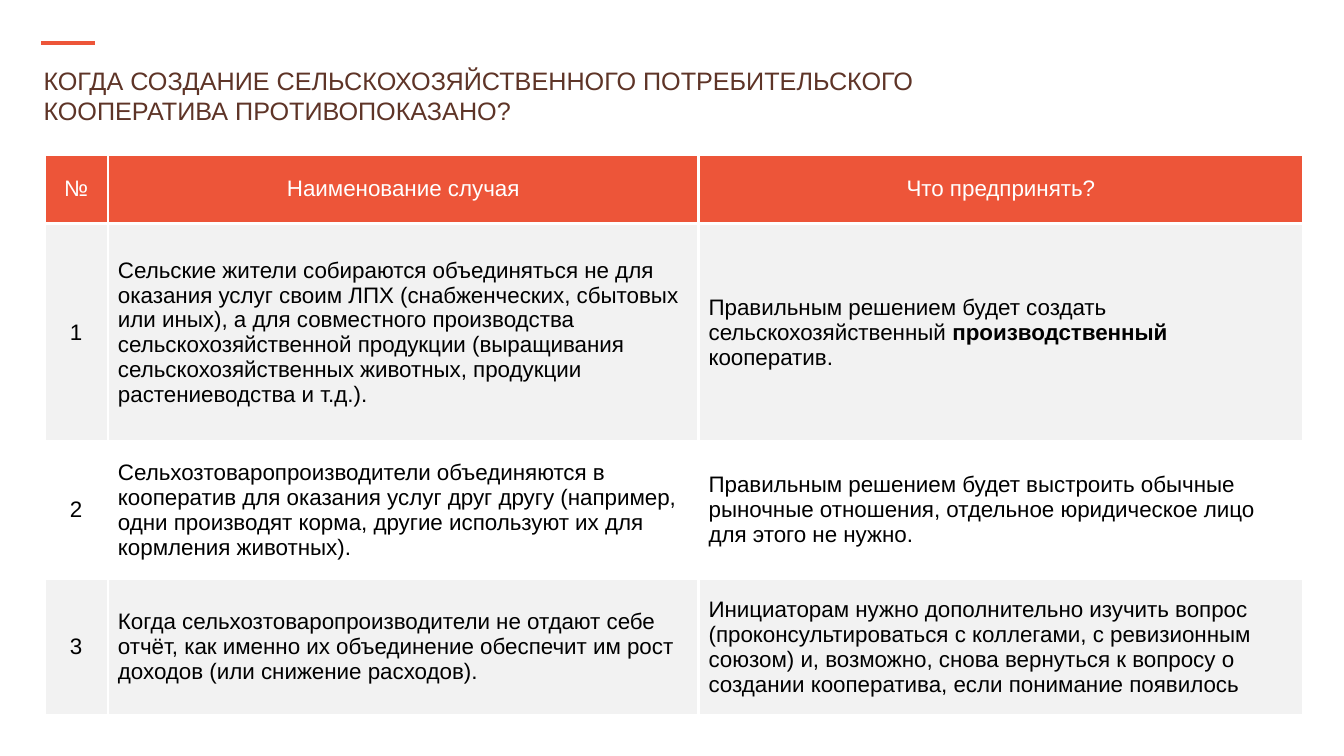
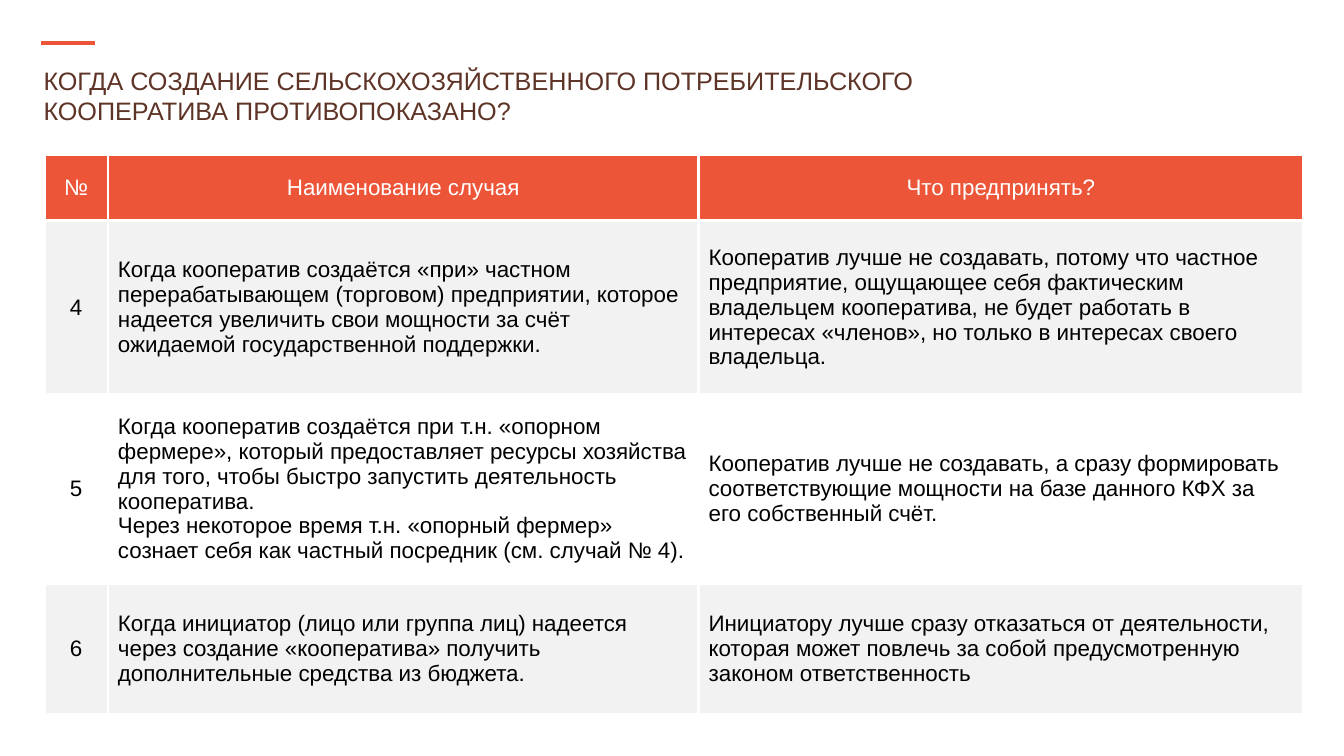
from dataclasses import dataclass

from lxml.etree import SubElement
from pptx import Presentation
from pptx.dml.color import RGBColor
from pptx.enum.shapes import MSO_CONNECTOR
from pptx.enum.text import MSO_ANCHOR, PP_ALIGN
from pptx.oxml.ns import qn
from pptx.slide import Slide
from pptx.table import _Cell
from pptx.util import Pt

# Shared look
FONT = "Arial"
RED, BROWN, GREY, WHITE, BLACK = "ED5539", "5E3427", "F2F2F2", "FFFFFF", "000000"
TITLE = "КОГДА СОЗДАНИЕ СЕЛЬСКОХОЗЯЙСТВЕННОГО ПОТРЕБИТЕЛЬСКОГО КООПЕРАТИВА ПРОТИВОПОКАЗАНО?"
HEAD = ("№", "Наименование случая", "Что предпринять?")
COLS = (45.4, 421.9, 432)
LEFT, TOP = 31.7, 110.2


@dataclass
class Case:
    """One table row; ** marks bold words."""
    height: float
    name: str
    advice: str


@dataclass
class Page:
    start: int
    head: float
    cases: list[Case]


PAGES = [
    Page(1, 49.7, [
        Case(155.5,
             "Сельские жители собираются объединяться не для оказания услуг своим ЛПХ "
             "(снабженческих, сбытовых или иных), а для совместного производства "
             "сельскохозяйственной продукции (выращивания сельскохозяйственных животных, "
             "продукции растениеводства и т.д.).",
             "Правильным решением будет создать сельскохозяйственный "
             "**производственный** кооператив."),
        Case(97.9,
             "Сельхозтоваропроизводители объединяются в кооператив для оказания услуг "
             "друг другу (например, одни производят корма, другие используют их для "
             "кормления животных).",
             "Правильным решением будет выстроить обычные рыночные отношения, "
             "отдельное юридическое лицо для этого не нужно."),
        Case(97.9,
             "Когда сельхозтоваропроизводители не отдают себе отчёт, как именно их "
             "объединение обеспечит им рост доходов (или снижение расходов).",
             "Инициаторам нужно дополнительно изучить вопрос (проконсультироваться с "
             "коллегами, с ревизионным союзом) и, возможно, снова вернуться к вопросу "
             "о создании кооператива, если понимание появилось"),
    ]),
    Page(4, 47.5, [
        Case(123.8,
             "Когда кооператив создаётся «при» частном перерабатывающем (торговом) "
             "предприятии, которое надеется увеличить свои мощности за счёт ожидаемой "
             "государственной поддержки.",
             "Кооператив лучше не создавать, потому что частное предприятие, ощущающее "
             "себя фактическим владельцем кооператива, не будет работать в интересах "
             "«членов», но только в интересах своего владельца."),
        Case(135.4,
             "Когда кооператив создаётся при т.н. «опорном фермере», который "
             "предоставляет ресурсы хозяйства для того, чтобы быстро запустить "
             "деятельность кооператива.\n"
             "Через некоторое время т.н. «опорный фермер» сознает себя как частный "
             "посредник (см. случай № 4).",
             "Кооператив лучше не создавать, а сразу формировать соответствующие "
             "мощности на базе данного КФХ за его собственный счёт."),
        Case(93.6,
             "Когда инициатор (лицо или группа лиц) надеется через создание "
             "«кооператива» получить дополнительные средства из бюджета.",
             "Инициатору лучше сразу отказаться от деятельности, которая может "
             "повлечь за собой предусмотренную законом ответственность"),
    ]),
]


def rgb(code: str) -> RGBColor:
    return RGBColor.from_string(code)


def style(font, size: float, color: str) -> None:
    font.name, font.size = FONT, Pt(size)
    font.color.rgb = rgb(color)


def add_top(slide: Slide) -> None:
    # Accent line
    line = slide.shapes.add_connector(
        MSO_CONNECTOR.STRAIGHT, Pt(29.5), Pt(31), Pt(67.7), Pt(31))
    line.line.color.rgb, line.line.width = rgb(RED), Pt(3)
    SubElement(line._element.spPr, qn("a:effectLst"))
    # Title
    box = slide.shapes.add_textbox(Pt(24), Pt(43.2), Pt(724), Pt(23))
    frame = box.text_frame
    frame.word_wrap = True
    frame.text = TITLE
    style(frame.paragraphs[0].runs[0].font, 18, BROWN)


def add_edges(cell: _Cell) -> None:
    props = cell._tc.get_or_add_tcPr()
    for side in ("lnL", "lnR", "lnT", "lnB"):
        edge = SubElement(props, qn(f"a:{side}"), w=str(Pt(2.25)))
        SubElement(SubElement(edge, qn("a:solidFill")), qn("a:srgbClr"), val=WHITE)


def fill_cell(cell: _Cell, text: str, back: str, color: str, mid: bool) -> None:
    add_edges(cell)
    cell.fill.solid()
    cell.fill.fore_color.rgb = rgb(back)
    cell.vertical_anchor = MSO_ANCHOR.MIDDLE
    cell.text_frame.text = text
    for para in cell.text_frame.paragraphs:
        para.alignment = PP_ALIGN.CENTER if mid else PP_ALIGN.LEFT
        parts = para.text.split("**")
        para.text = parts[0]
        for part in parts[1:]:
            para.add_run().text = part
        for spot, run in enumerate(para.runs):
            style(run.font, 16, color)
            run.font.bold = spot % 2 == 1


def add_grid(slide: Slide, page: Page) -> None:
    highs = [page.head] + [case.height for case in page.cases]
    rows = [HEAD] + [(str(num), case.name, case.advice)
                     for num, case in enumerate(page.cases, page.start)]
    grid = slide.shapes.add_table(
        len(rows), len(COLS), Pt(LEFT), Pt(TOP), Pt(sum(COLS)), Pt(sum(highs))).table
    for col, width in zip(grid.columns, COLS):
        col.width = Pt(width)
    for r, (row, high) in enumerate(zip(rows, highs)):
        grid.rows[r].height = Pt(high)
        back = RED if r == 0 else GREY if r % 2 else WHITE
        color = BLACK if r else WHITE
        for c, text in enumerate(row):
            fill_cell(grid.cell(r, c), text, back, color, r == 0 or c == 0)


def main() -> None:
    deck = Presentation()
    deck.slide_width, deck.slide_height = Pt(960), Pt(540)
    for page in PAGES:
        slide = deck.slides.add_slide(deck.slide_layouts[6])
        add_top(slide)
        add_grid(slide, page)
    deck.save("out.pptx")


if __name__ == "__main__":
    main()
